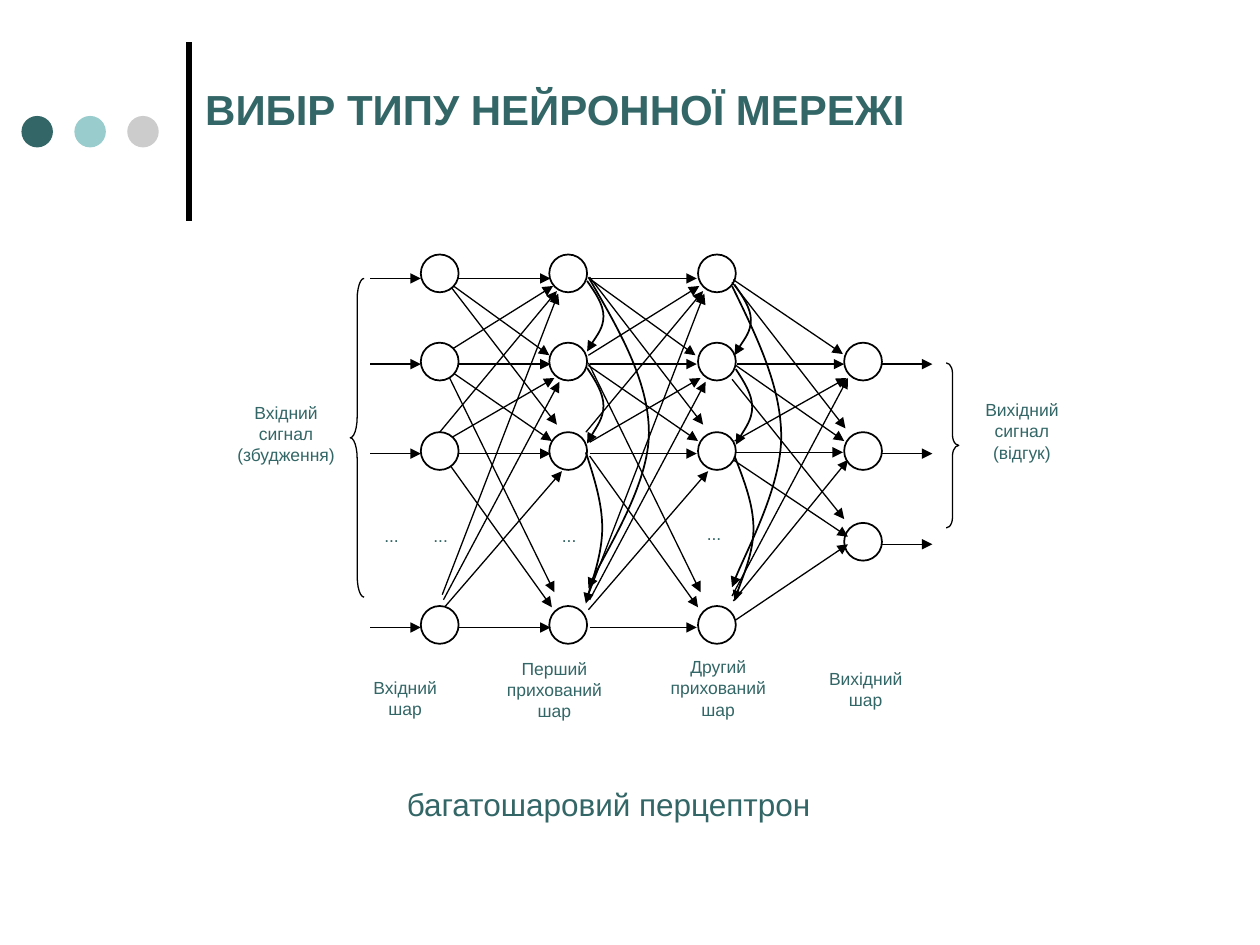
from lxml.etree import SubElement
from pptx import Presentation
from pptx.dml.color import RGBColor
from pptx.enum.shapes import MSO_CONNECTOR as Link, MSO_SHAPE as Preset
from pptx.enum.text import MSO_ANCHOR as Anchor, PP_ALIGN as Align
from pptx.oxml.ns import qn
from pptx.util import Inches, Pt

TEAL = RGBColor(0x33, 0x66, 0x66)
AQUA = RGBColor(0x99, 0xCC, 0xCC)
GREY = RGBColor(0xCC, 0xCC, 0xCC)
BLACK = RGBColor(0, 0, 0)
WHITE = RGBColor(255, 255, 255)

COLUMNS, ROWS = 100, 75
NODE = 3.0
LAYER_STEP = 11.6
NODE_ROWS = [20.2, 27.2, 34.3, 48.1]
OUTPUT_ROWS = [27.2, 34.3, 41.5]
SIGNAL_ROWS = [22.1, 28.9, 36, 49.8]
RESULT_ROWS = [28.9, 36, 43.2]
BEND = [(0.5, 1 / 6), (1, 1 / 3), (1, 0.5), (1, 2 / 3), (1 / 6, 11 / 12), (0, 1)]

HIDDEN_LINKS = [(35.2, row, 43.7, row) for row in SIGNAL_ROWS] + [
    (35.3, 22.2, 43.6, 28.2), (35.2, 36.2, 43.8, 48.2), (35.1, 29, 43.8, 35),
    (35.1, 28.2, 43.9, 22.7), (35.2, 35.1, 44, 30), (34.9, 34.3, 44.2, 23.1),
    (35.2, 22, 44.2, 33.7), (35.1, 47.2, 44.3, 23.3), (35.1, 48.4, 44.6, 37.4),
    (35.2, 47.6, 44.4, 30.3), (35.1, 28.8, 44, 47),
]
OUTPUT_LINKS = [
    (58.5, 28.9, 67, 28.9), (58.4, 35.9, 66.9, 35.9), (58.2, 22.2, 66.9, 28.1),
    (58.2, 36.5, 67.3, 42.6), (58.4, 29, 67, 35), (58.3, 35, 67.2, 30),
    (58.1, 22.4, 67.1, 34), (58.2, 47.7, 67.3, 36.5), (58.1, 47.3, 67.3, 30),
    (58.1, 30.1, 67, 41.2), (58.4, 49.2, 67.3, 43.2),
]
LABELS = [
    (18.3, 31.9, 8.8, 7.5, ["Вхідний сигнал", "(збудження)"]),
    (76.7, 31.7, 8.8, 7.5, ["Вихідний сигнал", "(відгук)"]),
    (28.4, 53.7, 7.5, 5.8, ["Вхідний шар"]),
    (64.3, 53, 8.8, 6.6, ["Вихідний шар"]),
    (39.6, 52.2, 8.8, 7.3, ["Перший прихований", "шар"]),
    (52.6, 52.1, 8.8, 7.5, ["Другий прихований", "шар"]),
]
GAPS = [(30.5, 41.7), (34.4, 41.7), (44.6, 41.7), (56.1, 41.5)]
LATERAL_CURVES = [
    (46.6, 22.3, 1.3, 5.6), (46.6, 29.2, 1.3, 6), (58.3, 22.6, 1.3, 5.6),
    (58.4, 29.3, 1.3, 6), (46.7, 22, 4.8, 24.7), (58.1, 22.7, 3.9, 23.9),
    (46.5, 35.9, 1.3, 12), (58.3, 36.2, 1.5, 11.5),
]


class Slide:
    font = "Arial"
    thin = 0.75
    firm = 1

    def __init__(self, deck):
        self.page = deck.slides.add_slide(deck.slide_layouts[6])
        self.column = deck.slide_width / COLUMNS
        self.row = deck.slide_height / ROWS

    def place(self, *cells):
        sizes = [self.column, self.row] * 2
        return [round(cell * size) for cell, size in zip(cells, sizes)]

    def arrowhead(self, item):
        outline = item.line._get_or_add_ln()
        SubElement(outline, qn("a:tailEnd"), type="triangle")

    def shape(self, preset, box, fill=None, line=None, width=firm):
        item = self.page.shapes.add_shape(preset, *self.place(*box))
        item.shadow.inherit = False
        if fill is None:
            item.fill.background()
        else:
            item.fill.solid()
            item.fill.fore_color.rgb = fill
        if line is None:
            item.line.fill.background()
        else:
            item.line.color.rgb = line
            item.line.width = Pt(width)
        return item

    def node(self, column, row):
        self.shape(Preset.OVAL, (column, row, NODE, NODE), WHITE, BLACK)

    def brace(self, preset, box, curl):
        item = self.shape(preset, box, line=BLACK, width=self.thin)
        item.adjustments[0] = curl

    def line(self, ends, width=thin, arrow=True):
        item = self.page.shapes.add_connector(Link.STRAIGHT, *self.place(*ends))
        item.line.color.rgb = BLACK
        item.line.width = Pt(width)
        if arrow:
            self.arrowhead(item)
        SubElement(item._element.spPr, qn("a:effectLst"))

    def curve(self, column, row, bulge, drop):
        builder = self.page.shapes.build_freeform(*self.place(column, row))
        points = [self.place(column + x * bulge, row + y * drop) for x, y in BEND]
        builder.add_line_segments(points, close=False)
        item = builder.convert_to_shape()
        outline = next(item._element.iter(qn("a:path")))
        segments = outline.findall(qn("a:lnTo"))
        for start in range(0, len(segments), 3):
            bezier = SubElement(outline, qn("a:cubicBezTo"))
            for segment in segments[start:start + 3]:
                bezier.append(segment[0])
                outline.remove(segment)
        item.shadow.inherit = False
        item.fill.background()
        item.line.color.rgb = BLACK
        item.line.width = Pt(self.firm)
        self.arrowhead(item)

    def fill_text(self, frame, lines, size, align=Align.LEFT, bold=False):
        frame.text = "\n".join(lines)
        for para in frame.paragraphs:
            para.alignment = align
            for span in para.runs:
                span.font.name = self.font
                span.font.size = Pt(size)
                span.font.bold = bold
                span.font.color.rgb = TEAL

    def label(self, box, lines, align=Align.CENTER):
        frame = self.shape(Preset.RECTANGLE, box, WHITE).text_frame
        frame.margin_left = frame.margin_right = 0
        frame.margin_top = frame.margin_bottom = 0
        frame.vertical_anchor = Anchor.TOP
        frame.word_wrap = True
        self.fill_text(frame, lines, 10, align)

    def text(self, box, words, size, bold=False, wrap=True, anchor=Anchor.TOP):
        frame = self.page.shapes.add_textbox(*self.place(*box)).text_frame
        frame.word_wrap = wrap
        frame.vertical_anchor = anchor
        self.fill_text(frame, [words], size, bold=bold)


def main():
    deck = Presentation()
    deck.slide_width, deck.slide_height = Inches(10), Inches(7.5)
    slide = Slide(deck)

    slide.line((15, 17.5, 15, 3.3), width=3, arrow=False)
    for index, color in enumerate([TEAL, AQUA, GREY]):
        slide.shape(Preset.OVAL, (1.7 + 4.2 * index, 9.2, 2.5, 2.5), color)
    slide.text((15.3, 6.1, 83.5, 5), "ВИБІР ТИПУ НЕЙРОННОЇ МЕРЕЖІ", 24,
               bold=True, anchor=Anchor.MIDDLE)

    for column, rows in [(43.6, NODE_ROWS), (55.4, NODE_ROWS), (67, OUTPUT_ROWS)]:
        for row in rows:
            slide.node(column, row)
    for shift in (0, LAYER_STEP):
        for left, top, right, bottom in HIDDEN_LINKS:
            slide.line((left + shift, top, right + shift, bottom))
    for ends in OUTPUT_LINKS:
        slide.line(ends)
    for row in SIGNAL_ROWS:
        slide.line((29.4, row, 33.4, row))
    for row in RESULT_ROWS:
        slide.line((70, row, 74, row))

    slide.brace(Preset.LEFT_BRACE, (27.8, 22.1, 1.1, 25.3), 1.5)
    slide.brace(Preset.RIGHT_BRACE, (75.1, 28.8, 1, 13.1), 0.83)
    for *box, lines in LABELS:
        slide.label(box, lines)
    for column, row in GAPS:
        slide.label((column, row, 1.3, 2.8), ["..."], Align.LEFT)
    for row in NODE_ROWS:
        slide.node(33.4, row)
    for bend in LATERAL_CURVES:
        slide.curve(*bend)
    slide.text((31.3, 61.8, 35.1, 4), "багатошаровий перцептрон", 18, wrap=False)

    deck.save("out.pptx")


if __name__ == "__main__":
    main()
